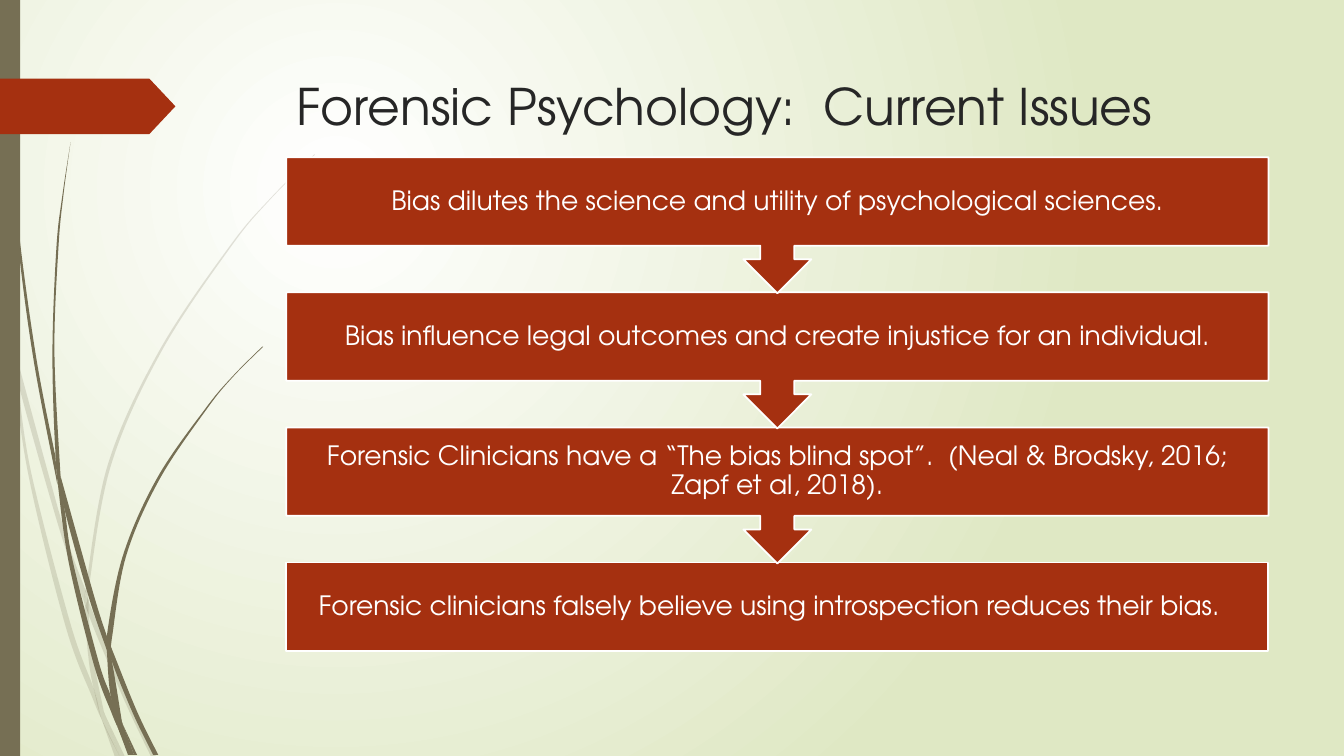
from lxml import etree
from pptx import Presentation
from pptx import util as u
from pptx.dml.color import RGBColor
from pptx.enum import shapes, text
from pptx.oxml.ns import qn

TITLE = "Forensic Psychology:  Current Issues"
STEPS = [
    "Bias dilutes the science and utility of psychological sciences.",
    "Bias influence legal outcomes and create injustice for an individual.",
    "Forensic Clinicians have a “The bias blind spot”.  (Neal & Brodsky, 2016; Zapf et al, 2018).",
    "Forensic clinicians falsely believe using introspection reduces their bias.",
]
FONT = "TeX Gyre Adventor"
RUST = RGBColor(0xA5, 0x30, 0x10)
OLIVE = RGBColor(0x76, 0x6F, 0x54)
SAGE = RGBColor(0xDF, 0xE8, 0xC4)
WHITE = RGBColor(0xFF, 0xFF, 0xFF)
INK = RGBColor(0x26, 0x26, 0x26)

WIDTH, HEIGHT = 13.33, 7.5
LEFT, COLUMN = 2.84, 9.74
FIRST, PITCH, BOX, CALLOUT = 1.56, 1.34, 0.88, 1.35
INSET, LAST_RIGHT_INSET = 0.15, 0.31

# Each piece of grass: one edge, then the edge that leads back, in inches.
FAINT_GRASS = [
    ([(0.11, 3.5), (0.09, 3.22), (0, 2.82)], [(0, 2.99), (0.1, 3.44), (0.11, 3.5)]),
    ([(0.14, 3.45), (0.17, 3.76), (0.58, 5.22), (0.84, 5.99)],
     [(0.85, 5.86), (0.62, 5.2), (0.14, 3.45)]),
    ([(0.88, 5.96), (0.88, 6.1), (1.23, 6.94), (1.5, 7.51)],
     [(1.55, 7.51), (1.27, 6.92), (0.92, 6.07), (0.88, 5.96)]),
    ([(1.05, 7.11), (1.19, 7.51)], [(1.24, 7.51), (1.05, 7.11)]),
    ([(0.11, 3.5), (0.28, 4.7), (0.65, 6.21), (0.92, 6.93), (1.01, 7.14)],
     [(0.99, 7.07), (0.93, 6.83), (0.7, 6.19), (0.31, 4.69), (0.17, 3.76), (0.11, 3.5)]),
    ([(0.84, 5.99), (0.87, 6.46), (0.93, 6.83), (1.05, 7.11)],
     [(1.03, 7.06), (0.91, 6.46), (0.88, 6.1), (0.84, 5.99)]),
    ([(0.88, 5.96), (0.88, 5.84), (1.1, 4.62), (1.6, 3.49), (2.29, 2.45), (2.68, 1.98),
      (3.12, 1.54)],
     [(3.12, 1.53), (2.68, 1.97), (2.28, 2.44), (1.58, 3.48), (1.07, 4.61), (0.85, 5.84),
      (0.85, 5.86)]),
    ([(1.01, 7.14), (1.14, 7.51)], [(1.19, 7.51), (1.01, 7.14)]),
    ([(0.84, 5.99), (0.88, 6.1)], [(0.88, 5.96), (0.85, 5.86)]),
    ([(0.93, 6.83), (1.01, 7.14), (1.19, 7.51)], [(1.05, 7.11), (0.96, 6.92), (0.93, 6.83)]),
]
DARK_GRASS = [
    ([(0.03, 0), (0.04, 0.48), (0.07, 1.1), (0.17, 2.33), (0.33, 3.55), (0.57, 4.81)],
     [(0.55, 4.53), (0.36, 3.55), (0.19, 2.32), (0.08, 1.09), (0.05, 0.48), (0.04, 0)]),
    ([(0.6, 4.72), (0.64, 5.05), (0.88, 5.92), (1.06, 6.45)],
     [(1.06, 6.31), (0.93, 5.9), (0.6, 4.72)]),
    ([(1.1, 6.41), (1.11, 6.56), (1.32, 7.08), (1.52, 7.49)],
     [(1.57, 7.49), (1.36, 7.06), (1.13, 6.49), (1.1, 6.41)]),
    ([(0.57, 4.77), (0.68, 5.57), (0.93, 6.59), (1.11, 7.08), (1.17, 7.22)],
     [(1.16, 7.17), (1.1, 6.91), (0.98, 6.57), (0.72, 5.56), (0.64, 5.05), (0.57, 4.77)]),
    ([(0.6, 4.72), (0.54, 3.49), (0.58, 2.45), (0.63, 1.93), (0.7, 1.41)],
     [(0.7, 1.41), (0.62, 1.93), (0.56, 2.45), (0.52, 3.49), (0.55, 4.49), (0.6, 4.72)]),
    ([(1.22, 7.19), (1.33, 7.49)], [(1.36, 7.49), (1.22, 7.19)]),
    ([(0.55, 4.49), (0.57, 4.77), (0.64, 5.05)], [(0.6, 4.72), (0.55, 4.49)]),
    ([(1.11, 6.33), (1.25, 5.52), (1.58, 4.76), (2.05, 4.06), (2.31, 3.74), (2.61, 3.44)],
     [(2.6, 3.44), (2.31, 3.73), (2.04, 4.05), (1.56, 4.74), (1.22, 5.51), (1.06, 6.31),
      (1.1, 6.41)]),
    ([(1.17, 7.22), (1.27, 7.49)], [(1.31, 7.49), (1.17, 7.22)]),
    ([(1.06, 6.45), (1.1, 6.91), (1.22, 7.19)], [(1.21, 7.16), (1.11, 6.56), (1.06, 6.45)]),
    ([(1.06, 6.31), (1.06, 6.45), (1.11, 6.56)], [(1.1, 6.41), (1.06, 6.31)]),
    ([(1.1, 6.91), (1.17, 7.22), (1.3, 7.49)], [(1.33, 7.49), (1.22, 7.19), (1.1, 6.91)]),
]


def curve_controls(points):
    """The two Bezier handles of each stretch of a Catmull-Rom curve."""
    padded = [points[0], *points, points[-1]]
    for a, b, c, d in zip(padded, padded[1:], padded[2:], padded[3:]):
        yield (tuple(q + (r - p) / 6 for p, q, r in zip(a, b, c)),
               tuple(r - (s - q) / 6 for q, r, s in zip(b, c, d)))


def paint(shape, fill, line=None):
    shape.shadow.inherit = False
    shape.fill.solid()
    shape.fill.fore_color.rgb = fill
    if line is None:
        shape.line.fill.background()
    else:
        shape.line.color.rgb = line
        shape.line.width = u.Pt(1.25)


def add_box(page, kind, *frame):
    return page.shapes.add_shape(kind, *map(u.Inches, frame))


def add_grass(page, edges, opacity):
    first, second = ([(u.Inches(x), u.Inches(y)) for x, y in edge] for edge in edges)
    builder = page.shapes.build_freeform(*first[0])
    builder.add_line_segments(first[1:] + second, close=True)
    blade = builder.convert_to_shape()
    paint(blade, OLIVE)

    lines = list(blade.element.iter(qn("a:lnTo")))
    controls = [*curve_controls(first), None, *curve_controls(second)]
    for line, handles in zip(lines, controls):
        if handles is None:
            continue
        line.tag = qn("a:cubicBezTo")
        for index, (x, y) in enumerate(handles):
            line.insert(index, etree.Element(
                qn("a:pt"), x=str(round(x - blade.left)), y=str(round(y - blade.top))))
    if opacity < 100:
        color = blade.element.spPr.find(".//" + qn("a:srgbClr"))
        etree.SubElement(color, qn("a:alpha"), val=str(opacity * 1000))


def write(shape, words, size, color, align, **frame_format):
    frame = shape.text_frame
    frame.text = words
    for name, value in frame_format.items():
        setattr(frame, name, value)
    para = frame.paragraphs[0]
    para.alignment = align
    para.line_spacing = 0.9 if size < 30 else 1.0
    font = para.runs[0].font
    for name, value in dict(name=FONT, size=u.Pt(size), bold=False).items():
        setattr(font, name, value)
    font.color.rgb = color


def fill_background(page):
    """White glow in the upper left, fading to sage."""
    fill = page.background.fill
    fill.gradient()
    for stop, position, color in zip(fill.gradient_stops, (0, 1), (WHITE, SAGE)):
        stop.position = position
        stop.color.rgb = color
    gradient = page.element.find(".//" + qn("a:gradFill"))
    gradient.remove(gradient.find(qn("a:lin")))
    circle = etree.SubElement(gradient, qn("a:path"), {"path": "circle"})
    etree.SubElement(circle, qn("a:fillToRect"), l="50000", t="50000", r="100000", b="100000")


def main():
    deck = Presentation()
    deck.slide_width, deck.slide_height = u.Inches(WIDTH), u.Inches(HEIGHT)
    page = deck.slides.add_slide(deck.slide_layouts[5])
    fill_background(page)

    for grass, opacity in ((FAINT_GRASS, 20), (DARK_GRASS, 100)):
        for edges in grass:
            add_grass(page, edges, opacity)
    paint(add_box(page, shapes.MSO_SHAPE.RECTANGLE, 0, 0, 0.2, HEIGHT), OLIVE)
    tag = add_box(page, shapes.MSO_SHAPE.PENTAGON, 0, 0.78, 1.74, 0.55)
    tag.adjustments[0] = 0.47
    paint(tag, RUST)

    title = page.shapes.title
    frame = dict(left=LEFT, top=0.69, width=COLUMN, height=1.4)
    for name, value in frame.items():
        setattr(title, name, u.Inches(value))
    write(title, TITLE, 36, INK, text.PP_ALIGN.LEFT, word_wrap=True,
          vertical_anchor=text.MSO_ANCHOR.TOP, auto_size=text.MSO_AUTO_SIZE.NONE)

    inset = u.Inches(INSET)
    last = len(STEPS) - 1
    for row in range(last, -1, -1):
        kind, height, right = shapes.MSO_SHAPE.DOWN_ARROW_CALLOUT, CALLOUT, inset
        if row == last:
            kind, height, right = shapes.MSO_SHAPE.RECTANGLE, BOX, u.Inches(LAST_RIGHT_INSET)
        step = add_box(page, kind, LEFT, FIRST + row * PITCH, COLUMN, height)
        paint(step, RUST, WHITE)
        write(step, STEPS[row], 19, WHITE, text.PP_ALIGN.CENTER, word_wrap=True,
              vertical_anchor=text.MSO_ANCHOR.MIDDLE, margin_left=inset,
              margin_right=right, margin_top=inset, margin_bottom=inset)

    deck.save("out.pptx")


if __name__ == "__main__":
    main()
